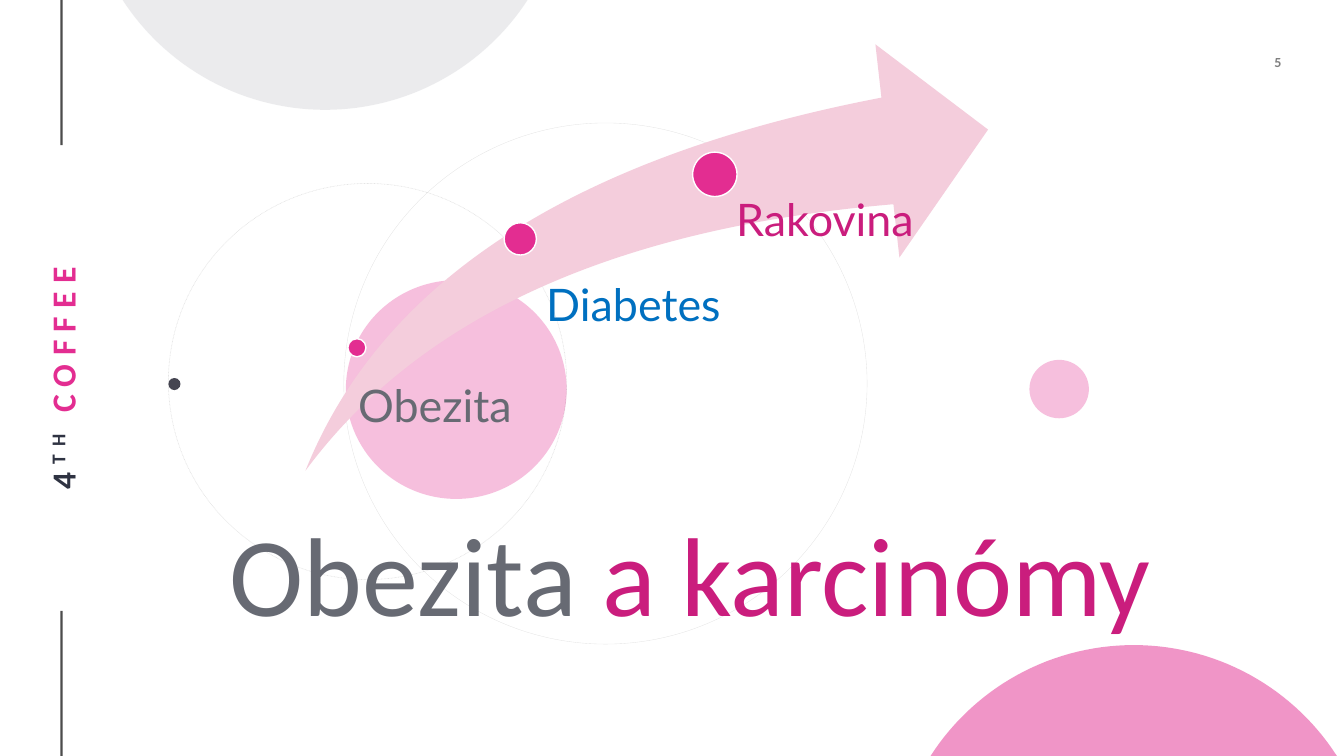
import math

from lxml import etree
from pptx import Presentation
from pptx.dml.color import RGBColor
from pptx.enum import dml, shapes, text
from pptx.oxml.ns import qn
from pptx.util import Inches, Pt

PINK, MAGENTA, GRAY, BLUE = "E32D91", "CA1D7D", "676A73", "0070C0"
PALE_PINK, SWOOSH_PINK, SILVER = "EE81BD", "F4CDDC", "D8D9DC"
INK, DOT_INK, BLACK, WHITE = "2F3342", "454551", "000000", "FFFFFF"


def paint(fill, color, opacity=100):
    """Give a fill a solid colour with an opacity in percent."""
    fill.solid()
    fill.fore_color.rgb = RGBColor.from_string(color)
    if opacity < 100:
        for color_node in fill._xPr.iter(qn("a:srgbClr")):
            alpha = etree.SubElement(color_node, qn("a:alpha"))
            alpha.set("val", str(opacity * 1000))


def style(shape, fill=None, opacity=100, outline=None, width=1, line_opacity=100):
    shape.shadow.inherit = False
    if fill:
        paint(shape.fill, fill, opacity)
    else:
        shape.fill.background()
    if outline:
        shape.line.width = Pt(width)
        paint(shape.line.fill, outline, line_opacity)
    else:
        shape.line.fill.background()
    return shape


def add_preset(slide, kind, box, **look):
    shape = slide.shapes.add_shape(kind, *map(Inches, box))
    return style(shape, **look)


def add_circle(slide, box, **look):
    return add_preset(slide, shapes.MSO_SHAPE.OVAL, box, **look)


def add_disc_edge(slide, left, chord_y, direction, color):
    """Draw the part of a large disc that shows at a slide edge."""
    half, depth, steps = 2.015, 1.1, 60
    radius = (half ** 2 + depth ** 2) / (2 * depth)
    reach = math.asin(half / radius)
    points = []
    for step in range(steps + 1):
        angle = reach * (2 * step / steps - 1)
        drop = depth - radius * (1 - math.cos(angle))
        points.append((Inches(left + half + radius * math.sin(angle)),
                       Inches(chord_y + direction * drop)))
    builder = slide.shapes.build_freeform(*points[0])
    builder.add_line_segments(points[1:], close=True)
    style(builder.convert_to_shape(), fill=color, opacity=50)


def add_rule(slide, x, top, bottom):
    rule = slide.shapes.add_connector(
        shapes.MSO_CONNECTOR.STRAIGHT, *map(Inches, (x, top, x, bottom)))
    rule.line.width = Pt(1.5)
    paint(rule.line.fill, BLACK, 70)
    etree.SubElement(rule._element.spPr, qn("a:effectLst"))


def add_text(slide, box, pieces, size, font="Calibri", bold=False,
             align=text.PP_ALIGN.CENTER, insets=(0.1, 0.05, 0.1, 0.05)):
    """Add one paragraph of (wording, colour, opacity) pieces."""
    label = slide.shapes.add_textbox(*map(Inches, box))
    frame = label.text_frame
    frame.word_wrap = True
    frame.vertical_anchor = text.MSO_ANCHOR.MIDDLE
    (frame.margin_left, frame.margin_top,
     frame.margin_right, frame.margin_bottom) = map(Inches, insets)
    paragraph = frame.paragraphs[0]
    paragraph.alignment = align
    for wording, color, opacity in pieces:
        run = paragraph.add_run()
        run.text = wording
        run.font.name, run.font.size, run.font.bold = font, Pt(size), bold
        paint(run.font.fill, color, opacity)
    return label


def add_brand(slide):
    brand = add_text(slide, (-1.69, 3.53, 4.61, 0.45),
                     [("4", INK, 100), ("TH ", INK, 100), ("COFFEE", PINK, 100)],
                     24, bold=True, insets=(0.02,) * 4)
    brand.rotation = 270
    runs = brand.text_frame.paragraphs[0].runs
    for run in runs:
        run._r.get_or_add_rPr().set("spc", "600")
    runs[1]._r.get_or_add_rPr().set("baseline", "30000")


def add_backdrop(slide):
    add_rule(slide, 0.61, 6.06, 7.5)
    add_brand(slide)
    add_text(slide, (11.94, 0.48, 0.77, 0.27), [("5", BLACK, 50)], 10,
             bold=True, align=text.PP_ALIGN.RIGHT, insets=(0,) * 4)
    add_rule(slide, 0.61, 0, 1.44)

    # Discs, thin rings and the small dark dot
    for disc in ((3.43, 2.78, 2.19, 2.17), (10.21, 3.57, 0.59, 0.58)):
        add_circle(slide, disc, fill=PALE_PINK, opacity=50)
    add_circle(slide, (3.41, 1.22, 5.19, 5.17),
               outline=BLACK, width=0.25, line_opacity=10)
    dotted_ring = add_circle(slide, (1.67, 1.82, 3.95, 3.93),
                             outline=BLACK, width=0.5, line_opacity=10)
    dotted_ring.line.dash_style = dml.MSO_LINE.ROUND_DOT
    add_circle(slide, (1.67, 3.75, 0.12, 0.12), fill=DOT_INK)
    add_disc_edge(slide, 9.23, 7.5, -1, PINK)
    add_disc_edge(slide, 1.21, -0.01, 1, SILVER)


def add_progression(slide):
    swoosh = add_preset(slide, shapes.MSO_SHAPE.SWOOSH_ARROW,
                        (3.03, 0.44, 6.77, 4.23), fill=SWOOSH_PINK)
    swoosh.adjustments[0] = swoosh.adjustments[1] = 0.25

    # Stage: marker left, top, diameter; label box, inset, wording, colour
    stages = [
        ((3.45, 3.36, 0.18), (2.93, 3.44, 2.79, 1.22), 0.09, "Obezita ", GRAY),
        ((5, 2.21, 0.32), (4.61, 1.9, 3.29, 2.3), 0.17, "Diabetes ", BLUE),
        ((6.87, 1.51, 0.44), (6.02, 0.73, 4.21, 2.94), 0.23, "Rakovina ", MAGENTA),
    ]
    for (left, top, diameter), box, inset, wording, color in stages:
        add_circle(slide, (left, top, diameter, diameter), fill=PINK, outline=WHITE)
        stage = add_text(slide, box, [(wording, color, 100)], 32, font="Lato",
                         insets=(inset, 0, 0, 0))
        stage.text_frame.paragraphs[0].line_spacing = 0.9


def main():
    deck = Presentation()
    deck.slide_width, deck.slide_height = Inches(13.33), Inches(7.5)
    slide = deck.slides.add_slide(deck.slide_layouts[6])
    paint(slide.background.fill, WHITE)

    add_backdrop(slide)
    add_text(slide, (0.85, 4.95, 11.99, 1.45),
             [("Obezita", GRAY, 100), (" a karcinómy", MAGENTA, 100)], 80)
    add_progression(slide)
    deck.save("out.pptx")


if __name__ == "__main__":
    main()
